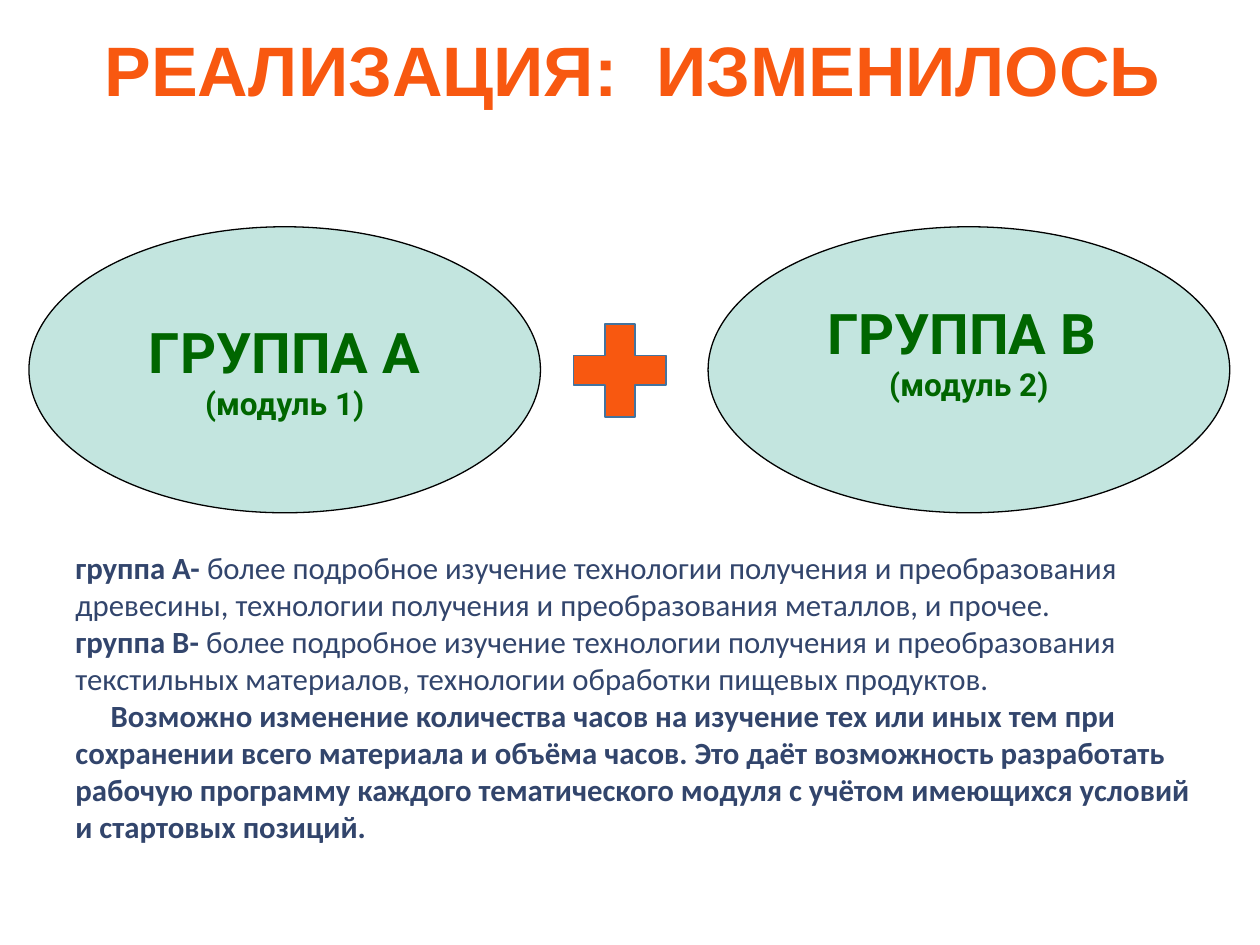
import pptx
import pptx.util
import pptx.dml.color
import pptx.enum.shapes
import pptx.enum.text
import pptx.oxml.ns
import lxml.etree

Inches = pptx.util.Inches
Pt = pptx.util.Pt
KIND = pptx.enum.shapes.MSO_SHAPE
ALIGN = pptx.enum.text.PP_ALIGN
ANCHOR = pptx.enum.text.MSO_ANCHOR

COLORS = {
    "orange": "F85810",
    "teal": "06947C",
    "green": "006600",
    "navy": "32456C",
    "steel": "43739E",
    "black": "000000",
}

TITLE = "РЕАЛИЗАЦИЯ:  ИЗМЕНИЛОСЬ"
GROUPS = [
    {"left": 0.23, "width": 4.06, "name": "ГРУППА А", "part": "(модуль 1)", "foot": 0.05},
    {"left": 5.62, "width": 4.14, "name": "ГРУППА В ", "part": "(модуль 2)", "foot": 0.35},
]
NOTES = [
    (0, [("группа А- ", True),
         ("более подробное изучение технологии получения и преобразования древесины, "
          "технологии получения и преобразования металлов, и прочее.", False)]),
    (0, [("группа В- ", True),
         ("более подробное изучение технологии получения и преобразования текстильных "
          "материалов, технологии обработки пищевых продуктов.", False)]),
    (0.28, [("Возможно изменение количества часов на изучение тех или иных тем при "
             "сохранении всего материала и объёма часов. Это даёт возможность разработать "
             "рабочую программу каждого тематического модуля с учётом имеющихся условий "
             "и стартовых позиций.", True)]),
]


def color(name):
    return pptx.dml.color.RGBColor.from_string(COLORS[name])


def add_run(para, text, size, face, tint, bold=True):
    run = para.add_run()
    run.text = text
    font = run.font
    font.size, font.name, font.bold = Pt(size), face, bold
    font.color.rgb = color(tint)


def next_para(frame, index):
    return frame.add_paragraph() if index else frame.paragraphs[0]


def add_form(slide, kind, box, fill, line, width):
    form = slide.shapes.add_shape(kind, *map(Inches, box))
    form.shadow.inherit = False
    form.fill.solid()
    form.fill.fore_color.rgb = color(fill)
    form.line.color.rgb = color(line)
    form.line.width = Pt(width)
    return form


def add_box(slide, box):
    frame = slide.shapes.add_textbox(*map(Inches, box)).text_frame
    frame.word_wrap = True
    return frame


def add_group(slide, group):
    box = (group["left"], 1.8, group["width"], 2.27)
    form = add_form(slide, KIND.OVAL, box, "teal", "black", 0.75)
    qn = pptx.oxml.ns.qn
    tint = form.fill._xPr.find(qn("a:solidFill")).find(qn("a:srgbClr"))
    lxml.etree.SubElement(tint, qn("a:alpha")).set("val", "24000")
    frame = form.text_frame
    frame.word_wrap = False
    frame.vertical_anchor = ANCHOR.MIDDLE
    frame.margin_bottom = Inches(group["foot"])
    for index, (key, size) in enumerate([("name", 32), ("part", 18)]):
        para = next_para(frame, index)
        para.alignment = ALIGN.CENTER
        add_run(para, group[key], size, "Roboto", "green")


def add_notes(slide):
    frame = add_box(slide, (0.5, 4.31, 9.21, 2.04))
    for index, (indent, runs) in enumerate(NOTES):
        para = next_para(frame, index)
        if indent:
            para._p.get_or_add_pPr().set("indent", str(Inches(indent)))
        for text, bold in runs:
            add_run(para, text, 17.6, "Calibri", "navy", bold)


def add_title(slide):
    frame = add_box(slide, (0.52, 0.17, 9, 0.83))
    frame.vertical_anchor = ANCHOR.MIDDLE
    para = frame.paragraphs[0]
    para.alignment = ALIGN.CENTER
    para.line_spacing = 0.9
    add_run(para, TITLE, 40, "Arial", "orange")


def main():
    deck = pptx.Presentation()
    deck.slide_width, deck.slide_height = Inches(10), Inches(7.5)
    slide = deck.slides.add_slide(deck.slide_layouts[6])
    for group in GROUPS:
        add_group(slide, group)
    add_notes(slide)
    add_form(slide, KIND.MATH_PLUS, (4.42, 2.44, 1, 1), "orange", "steel", 1)
    add_title(slide)
    deck.save("out.pptx")


if __name__ == "__main__":
    main()
